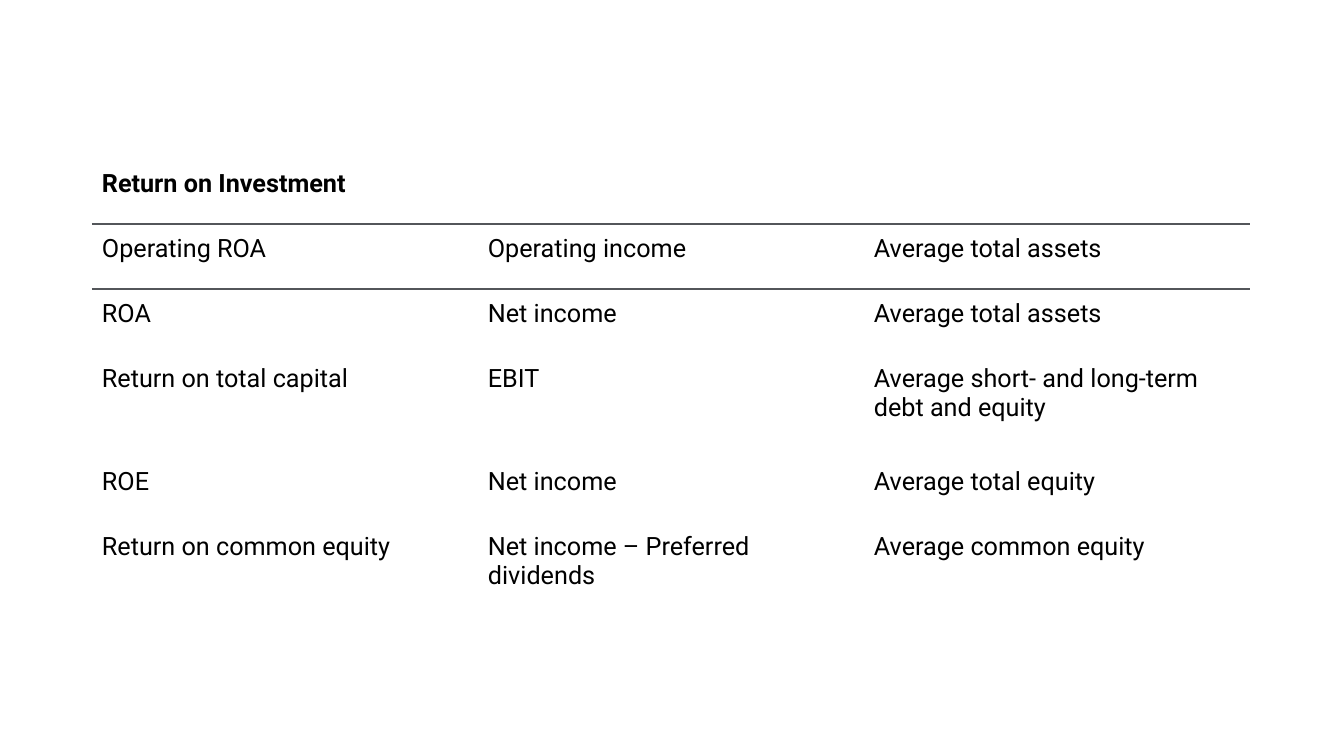
from lxml.etree import SubElement
from pptx import Presentation
from pptx.dml.color import RGBColor as RGB
from pptx.oxml import parse_xml
from pptx.oxml.ns import nsdecls, qn
from pptx.util import Emu, Pt

BLACK = RGB(0x00, 0x00, 0x00)
GREY = RGB(0x53, 0x56, 0x5A)
PLAIN = "{2D5ABB26-0587-4C30-8999-92F81FD0307C}"  # no style, no grid
SCALE = 914400 / 100.8


def px(n):
    return Emu(round(n * SCALE))


def write(cell, text, size=18, bold=False, color=BLACK, font="Roboto"):
    """Fill a cell with one formatted run."""
    cell.margin_left = cell.margin_right = px(10)
    cell.margin_top = cell.margin_bottom = px(10)
    run = cell.text_frame.paragraphs[0].add_run()
    run.text = text
    run.font.name = font
    run.font.size = Pt(size)
    run.font.bold = bold
    run.font.color.rgb = color


TITLE = "Return on Investment"
RATIOS = [
    ("Operating ROA", "Operating income", "Average total assets"),
    ("ROA", "Net income", "Average total assets"),
    ("Return on total capital", "EBIT",
     "Average short- and long-term debt and equity"),
    ("ROE", "Net income", "Average total equity"),
    ("Return on common equity", "Net income – Preferred dividends",
     "Average common equity"),
]
LOW, TALL = 65, 103
HEIGHTS = [LOW, LOW, LOW, TALL, LOW, TALL]
COLS, WIDTH = 3, 386

prs = Presentation()
prs.slide_width, prs.slide_height = px(1344), px(756)
slide = prs.slides.add_slide(prs.slide_layouts[6])

frame = slide.shapes.add_table(
    len(HEIGHTS), COLS, px(92), px(159), px(COLS * WIDTH), px(sum(HEIGHTS)))
table = frame.table
table.first_row = table.horz_banding = False
props = table._tbl.tblPr
style = props.find(qn("a:tableStyleId"))
if style is None:
    style = SubElement(props, qn("a:tableStyleId"))
style.text = PLAIN

for col in table.columns:
    col.width = px(WIDTH)
for row, height in zip(table.rows, HEIGHTS):
    row.height = px(height)
for cell in table.iter_cells():
    cell.fill.background()

head = table.cell(0, 0)
head.merge(table.cell(0, COLS - 1))
write(head, TITLE, bold=True)
for r, ratio in enumerate(RATIOS, 1):
    for c, text in enumerate(ratio):
        write(table.cell(r, c), text)

# Rule between the heading and the ratios
for r, side in enumerate(("lnB", "lnT")):
    for c in range(COLS):
        rule = parse_xml(
            f'<a:{side} {nsdecls("a")} w="{Pt(1.5)}"><a:solidFill>'
            f'<a:srgbClr val="{GREY}"/></a:solidFill></a:{side}>')
        table.cell(r, c)._tc.get_or_add_tcPr().insert(0, rule)

prs.save("out.pptx")
